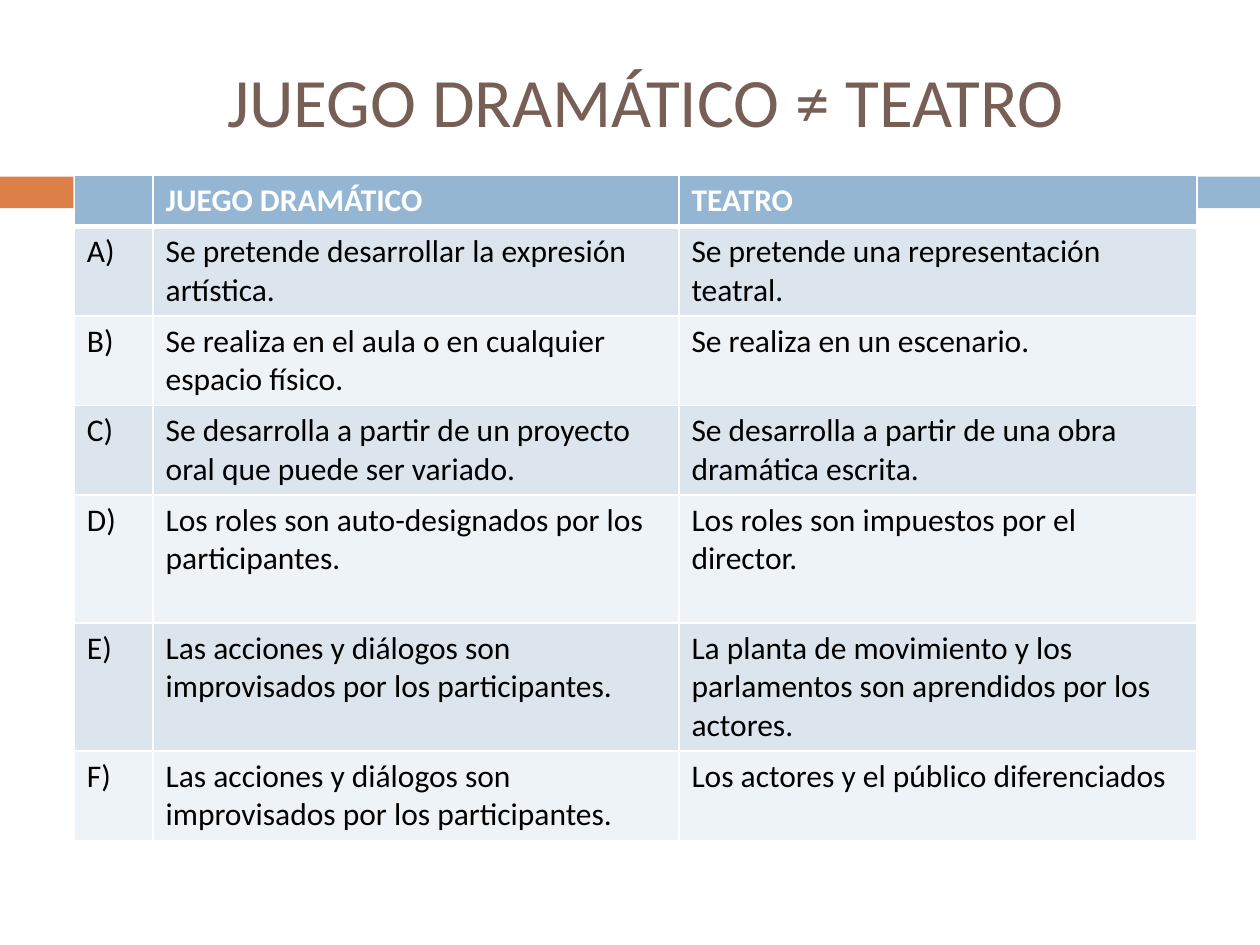
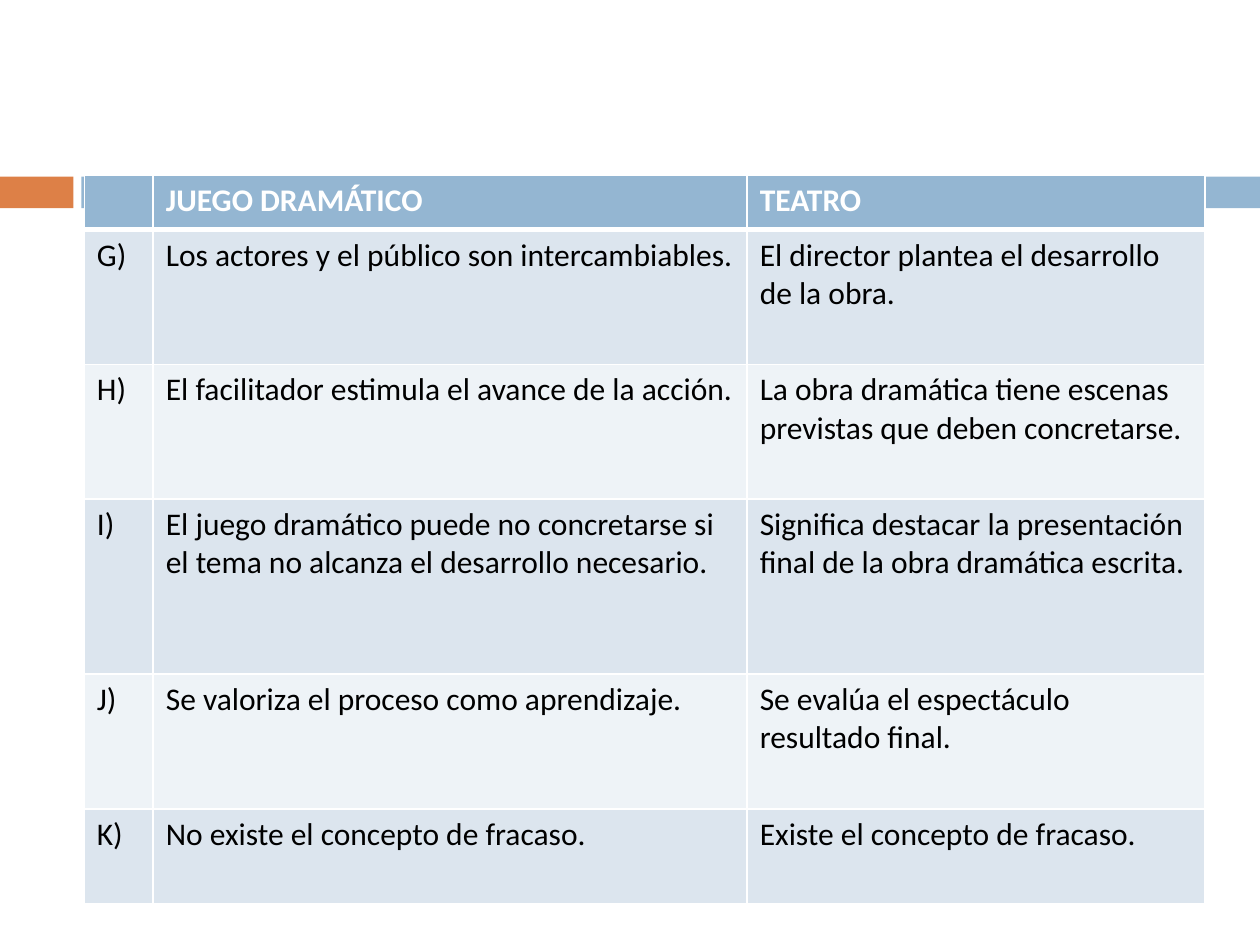
from lxml.etree import SubElement
from pptx import Presentation
from pptx.dml.color import RGBColor as RGB
from pptx.enum.shapes import MSO_SHAPE as SHAPE
from pptx.enum.text import MSO_ANCHOR as ANCHOR, MSO_AUTO_SIZE as FIT, PP_ALIGN as ALIGN
from pptx.oxml.ns import qn
from pptx.util import Pt

COLORS = {
    "white": "FFFFFF",
    "black": "000000",
    "title": "775F55",
    "orange": "DD8047",
    "blue": "94B6D2",
    "dark_row": "DCE5EE",
    "light_row": "EEF3F7",
}
FONT = "Calibri"
TABLE_TOP = 100.3
HEADER = ("", "JUEGO DRAMÁTICO", "TEATRO")

ROWS_A_F = [
    ("A)", "Se pretende desarrollar la expresión artística.",
     "Se pretende una representación teatral."),
    ("B)", "Se realiza en el aula o en cualquier espacio físico.",
     "Se realiza en un escenario."),
    ("C)", "Se desarrolla a partir de un proyecto oral que puede ser variado.",
     "Se desarrolla a partir de una obra dramática escrita."),
    ("D)", "Los roles son auto-designados por los participantes.",
     "Los roles son impuestos por el director."),
    ("E)", "Las acciones y diálogos son improvisados por los participantes.",
     "La planta de movimiento y los parlamentos son aprendidos por los actores."),
    ("F)", "Las acciones y diálogos son improvisados por los participantes.",
     "Los actores y el público diferenciados"),
]
ROWS_G_K = [
    ("G)", "Los actores y el público son intercambiables.",
     "El director plantea el desarrollo de la obra."),
    ("H)", "El facilitador estimula el avance de la acción.",
     "La obra dramática tiene escenas previstas que deben concretarse."),
    ("I)", "El juego dramático puede no concretarse si el tema no alcanza el desarrollo necesario.",
     "Significa destacar la presentación final de la obra dramática escrita."),
    ("J)", "Se valoriza el proceso como aprendizaje.",
     "Se evalúa el espectáculo resultado final."),
    ("K)", "No existe el concepto de fracaso.",
     "Existe el concepto de fracaso."),
]


def rgb(name):
    return RGB.from_string(COLORS[name])


def set_font(p, size, color, bold=False):
    p.font.name = FONT
    p.font.size = Pt(size)
    p.font.bold = bold
    p.font.color.rgb = rgb(color)


def add_band(slide, left, width, color):
    sp = slide.shapes.add_shape(SHAPE.RECTANGLE, Pt(left), Pt(101), Pt(width), Pt(18))
    sp.shadow.inherit = False
    sp.fill.solid()
    sp.fill.fore_color.rgb = rgb(color)
    sp.line.fill.background()
    return sp


def share_bands(slide):
    """Draw the two bands and hand them over to the slide's layout."""
    layout = slide.slide_layout
    for ph in list(layout.placeholders):
        if ph.placeholder_format.idx >= 10:
            ph.element.getparent().remove(ph.element)
    bands = [add_band(slide, 0, 42, "orange"), add_band(slide, 46.5, 673.5, "blue")]
    for i, sp in enumerate(bands):
        layout.shapes.element.insert(2 + i, sp.element)


def set_title(slide, text):
    s = slide.shapes.title
    s.left, s.top, s.width, s.height = Pt(48), Pt(18), Pt(642), Pt(78)
    tf = s.text_frame
    tf.text = text
    tf.auto_size = FIT.NONE
    tf.vertical_anchor = ANCHOR.MIDDLE
    p = tf.paragraphs[0]
    p.alignment = ALIGN.CENTER
    set_font(p, 39.6, "title")


def set_borders(cell, top, bottom):
    tcPr = cell._tc.get_or_add_tcPr()
    for side, width in (("L", 1), ("R", 1), ("T", top), ("B", bottom)):
        ln = SubElement(tcPr, qn(f"a:ln{side}"), w=str(Pt(width)))
        fill = SubElement(ln, qn("a:solidFill"))
        SubElement(fill, qn("a:srgbClr"), val=COLORS["white"])


def fill_cell(cell, row, text):
    is_header = row == 0
    set_borders(cell, top=3 if row == 1 else 1, bottom=3 if is_header else 1)
    cell.fill.solid()
    band = "blue" if is_header else "dark_row" if row % 2 else "light_row"
    cell.fill.fore_color.rgb = rgb(band)
    cell.text = text
    set_font(cell.text_frame.paragraphs[0], 18, "white" if is_header else "black", is_header)


def add_comparison(slide, left, widths, heights, rows):
    rows = [HEADER, *rows]
    frame = slide.shapes.add_table(len(rows), len(widths), Pt(left), Pt(TABLE_TOP),
                                   Pt(sum(widths)), Pt(sum(heights)))
    table = frame.table
    for col, width in zip(table.columns, widths):
        col.width = Pt(width)
    for i, (height, texts) in enumerate(zip(heights, rows)):
        table.rows[i].height = Pt(height)
        for j, text in enumerate(texts):
            fill_cell(table.cell(i, j), i, text)


def main():
    prs = Presentation()
    prs.slide_width, prs.slide_height = Pt(720), Pt(540)
    layout = prs.slide_layouts[5]

    s = prs.slides.add_slide(layout)
    share_bands(s)
    set_title(s, "JUEGO DRAMÁTICO ≠ TEATRO")
    add_comparison(s, 42.5, (45, 300.5, 296), (29, 51, 51, 51, 73, 73, 51), ROWS_A_F)

    s = prs.slides.add_slide(layout)
    title = s.shapes.title.element
    title.getparent().remove(title)
    add_comparison(s, 48.2, (39.4, 339.4, 261.6), (31, 77, 77, 100, 77, 54), ROWS_G_K)

    prs.save("out.pptx")


if __name__ == "__main__":
    main()
